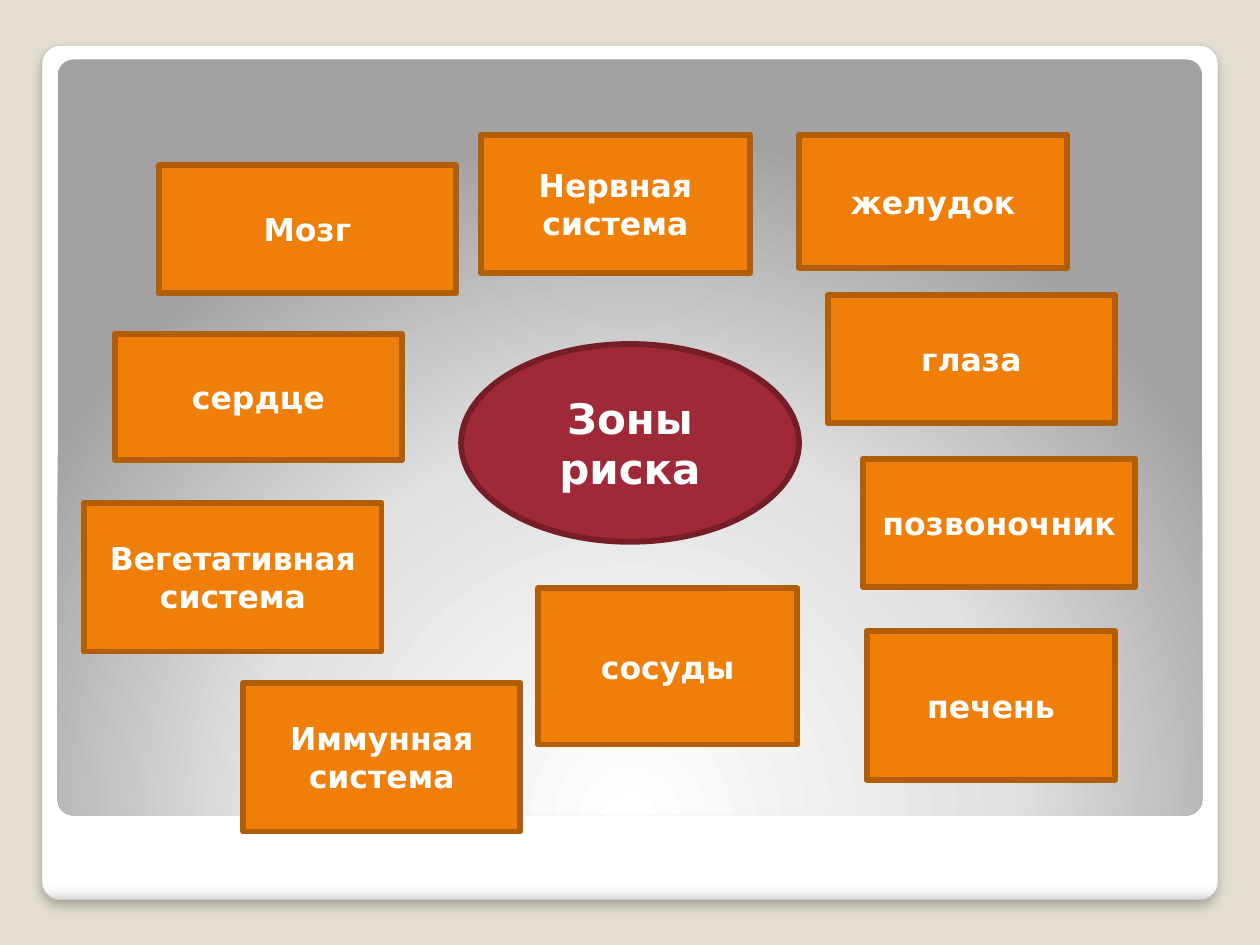
"""Build the risk zones slide: a central oval surrounded by labelled boxes."""
import dataclasses

import lxml.etree
import pptx
import pptx.dml.color
import pptx.enum.shapes
import pptx.enum.text
import pptx.oxml.ns
import pptx.util

Pt = pptx.util.Pt
qn = pptx.oxml.ns.qn
SHAPE = pptx.enum.shapes.MSO_SHAPE


@dataclasses.dataclass(frozen=True)
class Theme:
    background: str = "E3DED1"
    box: tuple = ("F07F09", "B25E07")
    oval: tuple = ("9F2936", "761E28")
    card_edge: str = "A4A4A4"
    shadow: str = "000000"
    text: str = "FFFFFF"
    card_stops: tuple = ((0, "FFFFFF"), (98, "FFFFFF"), (99, "F7F7F7"), (100, "DADADA"))
    panel_stops: tuple = ((0, "FFFFFF"), (55, "E1E1E1"), (100, "A2A2A2"))
    font: str = "DejaVu Sans"
    box_size: int = 18
    oval_size: int = 24
    outline: float = 3.35
    corner: float = 0.021


def rgb(color):
    return pptx.dml.color.RGBColor.from_string(color)


def add_node(parent, tag, **values):
    node = lxml.etree.SubElement(parent, qn(tag))
    for name, value in values.items():
        node.set(name, str(value))
    return node


class SlideBuilder:
    def __init__(self, slide, theme):
        self.slide = slide
        self.theme = theme
        slide.background.fill.solid()
        slide.background.fill.fore_color.rgb = rgb(theme.background)

    def shape(self, kind, place):
        shape = self.slide.shapes.add_shape(kind, *map(Pt, place))
        shape.shadow.inherit = False
        return shape

    def label(self, kind, place, text, colors, size):
        shape = self.shape(kind, place)
        fill, edge = colors
        shape.fill.solid()
        shape.fill.fore_color.rgb = rgb(fill)
        shape.line.color.rgb = rgb(edge)
        shape.line.width = Pt(self.theme.outline)
        frame = shape.text_frame
        frame.word_wrap = True
        frame.vertical_anchor = pptx.enum.text.MSO_ANCHOR.MIDDLE
        para = frame.paragraphs[0]
        para.alignment = pptx.enum.text.PP_ALIGN.CENTER
        span = para.add_run()
        span.text = text
        for name, value in {"name": self.theme.font, "size": Pt(size), "bold": True}.items():
            setattr(span.font, name, value)
        span.font.color.rgb = rgb(self.theme.text)

    def rounded(self, place, stops):
        shape = self.shape(SHAPE.ROUNDED_RECTANGLE, place)
        shape.adjustments[0] = self.theme.corner
        shape.line.fill.background()
        shape.fill.gradient()
        gradient = shape.fill._xPr.find(qn("a:gradFill"))
        for child in list(gradient):
            gradient.remove(child)
        stop_list = add_node(gradient, "a:gsLst")
        for position, color in stops:
            stop = add_node(stop_list, "a:gs", pos=position * 1000)
            add_node(stop, "a:srgbClr", val=color)
        return shape, gradient

    def card(self, place):
        shape, gradient = self.rounded(place, self.theme.card_stops)
        add_node(gradient, "a:lin", ang=90 * 60000, scaled=0)
        shape.line.color.rgb = rgb(self.theme.card_edge)
        shape.line.width = Pt(0.16)
        effects = shape.element.spPr.find(qn("a:effectLst"))
        shadow = add_node(effects, "a:outerShdw", blurRad=Pt(6), dist=Pt(4),
                          dir=90 * 60000, algn="tl", rotWithShape=0)
        color = add_node(shadow, "a:srgbClr", val=self.theme.shadow)
        add_node(color, "a:alpha", val=25000)

    def panel(self, place):
        gradient = self.rounded(place, self.theme.panel_stops)[1]
        radial = add_node(gradient, "a:path")
        radial.set("path", "circle")
        add_node(radial, "a:fillToRect", l=50000, t=175000, r=50000, b=-75000)

    def box(self, text, place):
        self.label(SHAPE.RECTANGLE, place, text, self.theme.box, self.theme.box_size)

    def oval(self, text, place):
        self.label(SHAPE.OVAL, place, text, self.theme.oval, self.theme.oval_size)


ZONES = {
    "Мозг": (90.7, 94.3, 169.9, 73.4),
    "Нервная система": (275, 77, 153.4, 79.2),
    "желудок": (456.5, 77, 153.4, 76.3),
    "сердце": (65.5, 190.8, 164.2, 72),
    "Вегетативная система": (48.2, 287.3, 169.9, 85),
    "глаза": (473, 168.5, 164.2, 73.4),
    "позвоночник": (493.2, 262.1, 155.5, 73.4),
    "сосуды": (307.4, 336.2, 148.3, 89.3),
    "печень": (495.4, 360.7, 141.8, 85),
    "Иммунная система": (139, 390.2, 158.4, 85),
}


def main():
    deck = pptx.Presentation()
    deck.slide_width, deck.slide_height = Pt(720), Pt(540)
    page = SlideBuilder(deck.slides.add_slide(deck.slide_layouts[6]), Theme())
    page.card((24, 25.9, 672, 488.2))
    page.panel((33, 34, 654, 432))
    page.oval("Зоны риска", (263.5, 196.6, 193, 113))
    for text, place in ZONES.items():
        page.box(text, place)
    deck.save("out.pptx")


if __name__ == "__main__":
    main()
